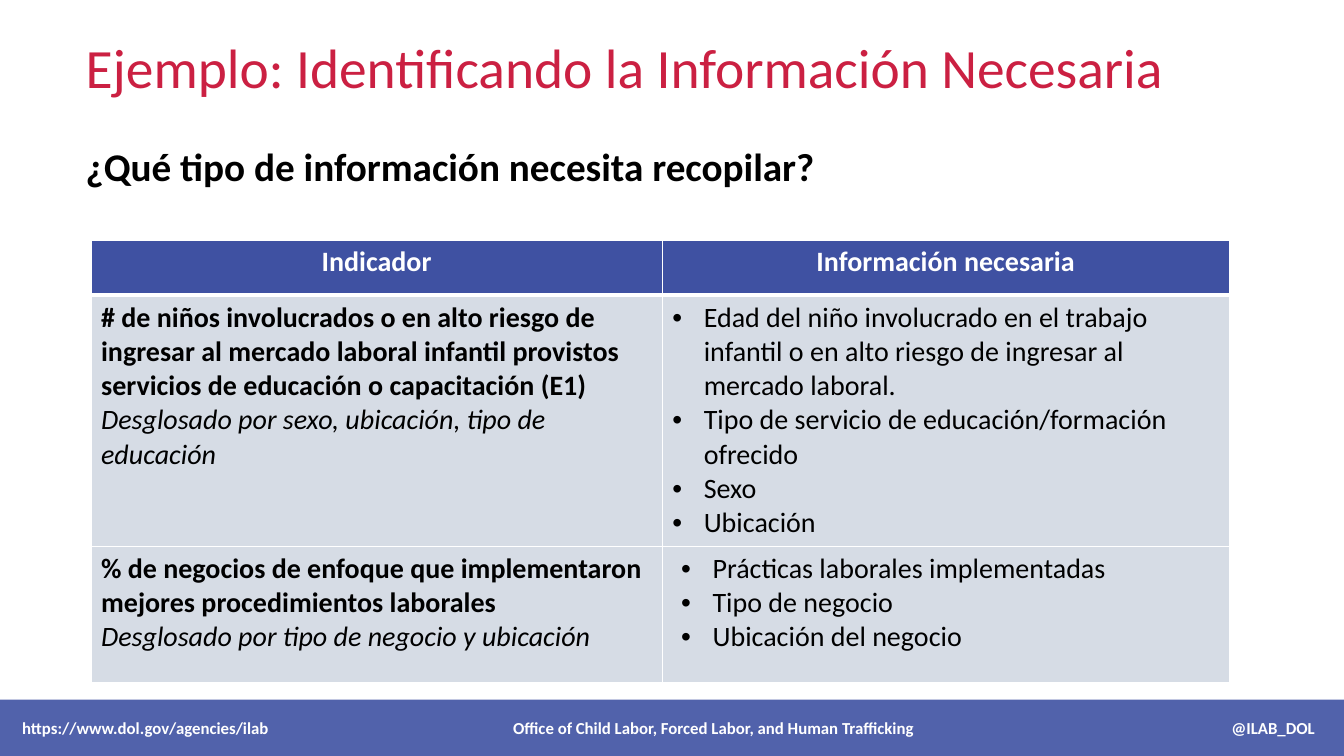
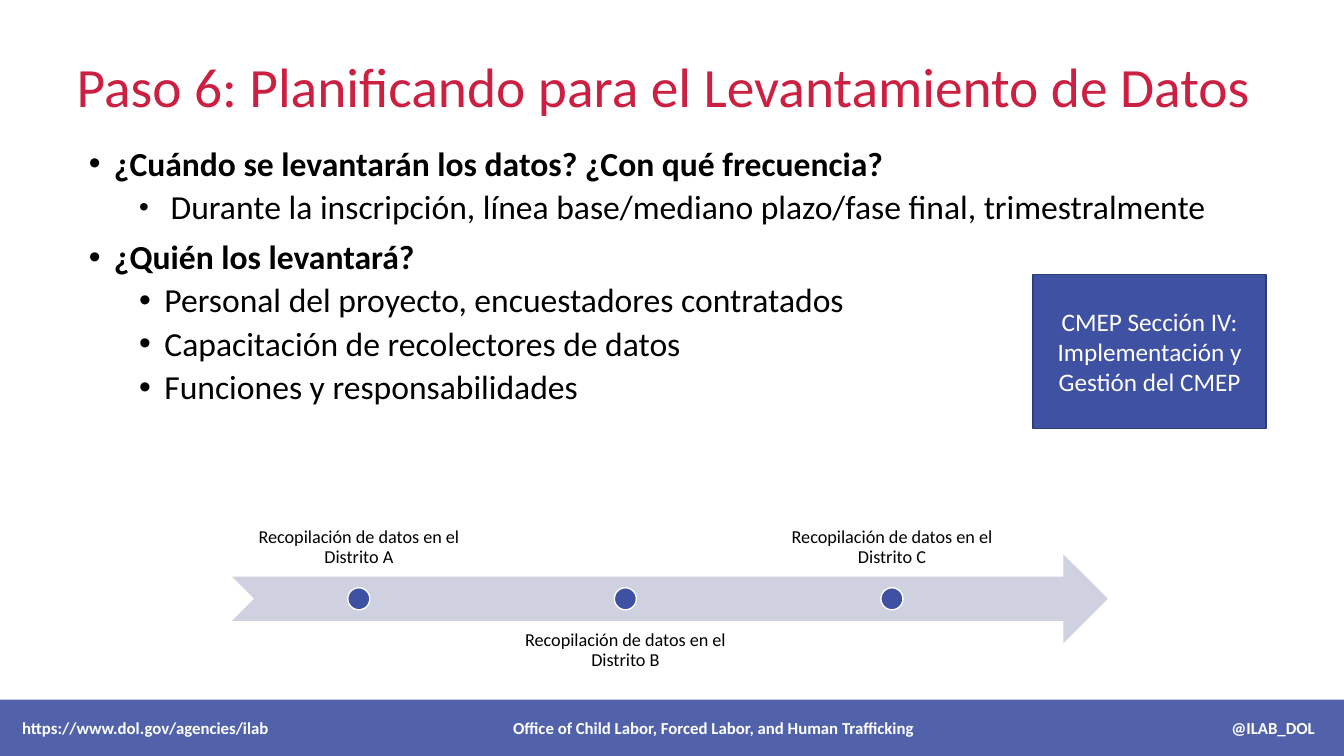
from dataclasses import dataclass

import lxml.etree
import pptx
import pptx.dml.color
import pptx.enum.shapes
import pptx.enum.text
import pptx.oxml.ns
import pptx.util

Pt = pptx.util.Pt
qn = pptx.oxml.ns.qn
ALIGN = pptx.enum.text.PP_ALIGN
ANCHOR = pptx.enum.text.MSO_ANCHOR
SHAPE = pptx.enum.shapes.MSO_SHAPE


@dataclass(frozen=True)
class Theme:
    font: str = "Calibri"
    red: str = "CB2042"
    blue: str = "3F51A2"
    navy: str = "2F3C78"
    lavender: str = "CFD0E0"
    gray: str = "D6DCE5"
    black: str = "000000"
    white: str = "FFFFFF"
    title: float = 39.6
    question: float = 28
    body: float = 24
    cell: float = 20
    callout: float = 18
    label: float = 13
    footer: float = 12


THEME = Theme()
SLIDE_SIZE = (960, 540)
FOOTER = ["https://www.dol.gov/agencies/ilab",
          "Office of Child Labor, Forced Labor, and Human Trafficking",
          "@ILAB_DOL"]
FOOTER_BOX = (0, 499.7, 962.6, 40.3)
FOOTER_INSET = 15.8
FOOTER_TABS = [("ctr", 494), ("r", 923.5)]

EXAMPLE_TITLE = "Ejemplo: Identificando la Información Necesaria"
QUESTION = "¿Qué tipo de información necesita recopilar?"
HEADINGS = ["Indicador", "Información necesaria"]
INDICATORS = [
    dict(name="# de niños involucrados o en alto riesgo de ingresar al mercado laboral "
              "infantil provistos servicios de educación o capacitación (E1)",
         breakdown="Desglosado por sexo, ubicación, tipo de educación",
         needs=["Edad del niño involucrado en el trabajo infantil o en alto riesgo "
                "de ingresar al mercado laboral.",
                "Tipo de servicio de educación/formación ofrecido",
                "Sexo",
                "Ubicación"],
         inset=7.2),
    dict(name="% de negocios de enfoque que implementaron mejores procedimientos laborales",
         breakdown="Desglosado por tipo de negocio y ubicación",
         needs=["Prácticas laborales implementadas",
                "Tipo de negocio",
                "Ubicación del negocio"],
         inset=13.5),
]
COLUMN_WIDTHS = [408, 405]
ROW_HEIGHTS = [39.5, 179.5, 97]

PLAN_TITLE = "Paso 6: Planificando para el Levantamiento de Datos"
PLAN = [
    ("¿Cuándo se levantarán los datos? ¿Con qué frecuencia?",
     ["Durante la inscripción, línea base/mediano plazo/fase final, trimestralmente"],
     dict(margin=58.5, hang=22.5, percent=83)),
    ("¿Quién los levantará?",
     ["Personal del proyecto, encuestadores contratados",
      "Capacitación de recolectores de datos",
      "Funciones y responsabilidades"],
     dict(margin=54, hang=18)),
]
CALLOUT = "CMEP Sección IV: Implementación y Gestión del CMEP"
MILESTONES = [f"Recopilación de datos en el Distrito {district}" for district in "ABC"]


def points(*values):
    return [Pt(value) for value in values]


def color(value):
    return pptx.dml.color.RGBColor.from_string(value)


def add_xml(parent, tag, **attributes):
    child = lxml.etree.SubElement(parent, qn(tag))
    for name, value in attributes.items():
        child.set(name, str(value))
    return child


def write(paragraph, text, size, ink=THEME.black, bold=False, italic=False,
          align=ALIGN.LEFT, spacing=None, before=None):
    paragraph.text = text
    paragraph.alignment = align
    if spacing:
        paragraph.line_spacing = spacing
    if before is not None:
        paragraph.space_before = Pt(before)
    font = paragraph.font
    font.name, font.size, font.bold, font.italic = THEME.font, Pt(size), bold, italic
    font.color.rgb = color(ink)


def indent(paragraph, margin, hang, percent=100):
    properties = paragraph._p.get_or_add_pPr()
    properties.set("marL", str(Pt(margin)))
    properties.set("indent", str(-Pt(hang)))
    if hang:
        add_xml(properties, "a:buSzPct", val=percent * 1000)
        add_xml(properties, "a:buFont", typeface="Arial")
        add_xml(properties, "a:buChar", char="•")
    else:
        add_xml(properties, "a:buNone")


def next_paragraph(frame, index):
    return frame.add_paragraph() if index else frame.paragraphs[0]


def place(placeholder, box, anchor):
    placeholder.left, placeholder.top, placeholder.width, placeholder.height = points(*box)
    frame = placeholder.text_frame
    frame.auto_size = pptx.enum.text.MSO_AUTO_SIZE.NONE
    frame.word_wrap = True
    frame.vertical_anchor = anchor
    return frame


def add_block(slide, preset, box, fill, line=None):
    block = slide.shapes.add_shape(preset, *points(*box))
    block.shadow.inherit = False
    block.fill.solid()
    block.fill.fore_color.rgb = color(fill)
    if line:
        block.line.color.rgb = color(line)
        block.line.width = Pt(1)
    else:
        block.line.fill.background()
    return block


def add_footer(slide):
    band = add_block(slide, SHAPE.RECTANGLE, FOOTER_BOX, THEME.blue)
    band_color = band._element.spPr.find(qn("a:solidFill"))[0]
    add_xml(band_color, "a:alpha", val=90000)
    frame = band.text_frame
    frame.margin_left = Pt(FOOTER_INSET)
    frame.vertical_anchor = ANCHOR.MIDDLE
    line = frame.paragraphs[0]
    tabs = add_xml(line._p.get_or_add_pPr(), "a:tabLst")
    for side, position in FOOTER_TABS:
        add_xml(tabs, "a:tab", pos=Pt(position), algn=side)
    write(line, "\t".join(FOOTER), THEME.footer, THEME.white, bold=True)


def add_slide(deck, title, title_box, body_box):
    slide = deck.slides.add_slide(deck.slide_layouts[1])
    heading = place(slide.shapes.title, title_box, ANCHOR.BOTTOM)
    write(heading.paragraphs[0], title, THEME.title, THEME.red, spacing=0.9)
    return slide, place(slide.placeholders[1], body_box, ANCHOR.TOP)


def finish_cell(cell, fill, bottom=1):
    cell.fill.solid()
    cell.fill.fore_color.rgb = color(fill)
    properties = cell._tc.get_or_add_tcPr()
    for index, (side, width) in enumerate([("L", 1), ("R", 1), ("T", 1), ("B", bottom)]):
        border = add_xml(properties, f"a:ln{side}", w=Pt(width))
        add_xml(add_xml(border, "a:solidFill"), "a:srgbClr", val=THEME.white)
        properties.insert(index, border)


def add_indicator_table(slide):
    box = points(65, 171.4, sum(COLUMN_WIDTHS), sum(ROW_HEIGHTS))
    table = slide.shapes.add_table(len(ROW_HEIGHTS), len(COLUMN_WIDTHS), *box).table
    table.horz_banding = False
    for column, width in zip(table.columns, COLUMN_WIDTHS):
        column.width = Pt(width)
    for row, height in zip(table.rows, ROW_HEIGHTS):
        row.height = Pt(height)

    for index, heading in enumerate(HEADINGS):
        cell = table.cell(0, index)
        write(cell.text_frame.paragraphs[0], heading, THEME.cell, THEME.white,
              bold=True, align=ALIGN.CENTER)
        finish_cell(cell, THEME.blue, bottom=3)

    for row, indicator in enumerate(INDICATORS, 1):
        summary, needs = table.cell(row, 0), table.cell(row, 1)
        frame = summary.text_frame
        write(frame.paragraphs[0], indicator["name"], THEME.cell, bold=True)
        write(frame.add_paragraph(), indicator["breakdown"], THEME.cell, italic=True)
        needs.margin_left = Pt(indicator["inset"])
        for index, need in enumerate(indicator["needs"]):
            paragraph = next_paragraph(needs.text_frame, index)
            indent(paragraph, 22.5, 22.5)
            write(paragraph, need, THEME.cell)
        finish_cell(summary, THEME.gray)
        finish_cell(needs, THEME.gray)


def add_timeline(slide):
    left, pitch, label_width, label_height, dot = 165.6, 190.4, 181.4, 63.4, 15.8
    arrow_top, arrow_height = 396, 63.4
    add_block(slide, SHAPE.NOTCHED_RIGHT_ARROW,
              (left, arrow_top, 625.7, arrow_height), THEME.lavender)
    for index, milestone in enumerate(MILESTONES):
        x = left + index * pitch
        above = index % 2 == 0
        top = 349.2 if above else 443.5
        label = slide.shapes.add_textbox(*points(x, top, label_width, label_height))
        frame = label.text_frame
        frame.word_wrap = True
        frame.margin_left = frame.margin_right = Pt(7.2)
        frame.margin_top = frame.margin_bottom = Pt(7.2)
        frame.vertical_anchor = ANCHOR.BOTTOM if above else ANCHOR.TOP
        write(frame.paragraphs[0], milestone, THEME.label, align=ALIGN.CENTER, spacing=0.9)
        add_block(slide, SHAPE.OVAL,
                  (x + (label_width - dot) / 2, arrow_top + (arrow_height - dot) / 2, dot, dot),
                  THEME.blue, THEME.white)


def build_example(deck):
    slide, body = add_slide(deck, EXAMPLE_TITLE, (54, 0, 811, 75.6), (54, 101.5, 536.4, 51))
    question = body.paragraphs[0]
    indent(question, 0, 0)
    write(question, QUESTION, THEME.question, bold=True, spacing=0.9, before=10)
    add_indicator_table(slide)
    add_footer(slide)


def build_plan(deck):
    slide, body = add_slide(deck, PLAN_TITLE, (47.5, 13, 857, 75.6), (56.2, 101.5, 864, 247.7))
    for index, (question, answers, answer_indent) in enumerate(PLAN):
        paragraph = next_paragraph(body, index)
        indent(paragraph, 18, 18)
        write(paragraph, question, THEME.body, bold=True, spacing=0.9, before=10)
        for answer in answers:
            paragraph = body.add_paragraph()
            paragraph.level = 1
            indent(paragraph, **answer_indent)
            write(paragraph, answer, THEME.body, spacing=0.9, before=5)

    callout = add_block(slide, SHAPE.RECTANGLE, (738, 196, 166.3, 110), THEME.blue, THEME.navy)
    callout.text_frame.vertical_anchor = ANCHOR.MIDDLE
    write(callout.text_frame.paragraphs[0], CALLOUT, THEME.callout, THEME.white,
          align=ALIGN.CENTER)
    add_timeline(slide)
    add_footer(slide)


def main():
    deck = pptx.Presentation()
    deck.slide_width, deck.slide_height = points(*SLIDE_SIZE)
    build_example(deck)
    build_plan(deck)
    deck.save("out.pptx")


if __name__ == "__main__":
    main()
